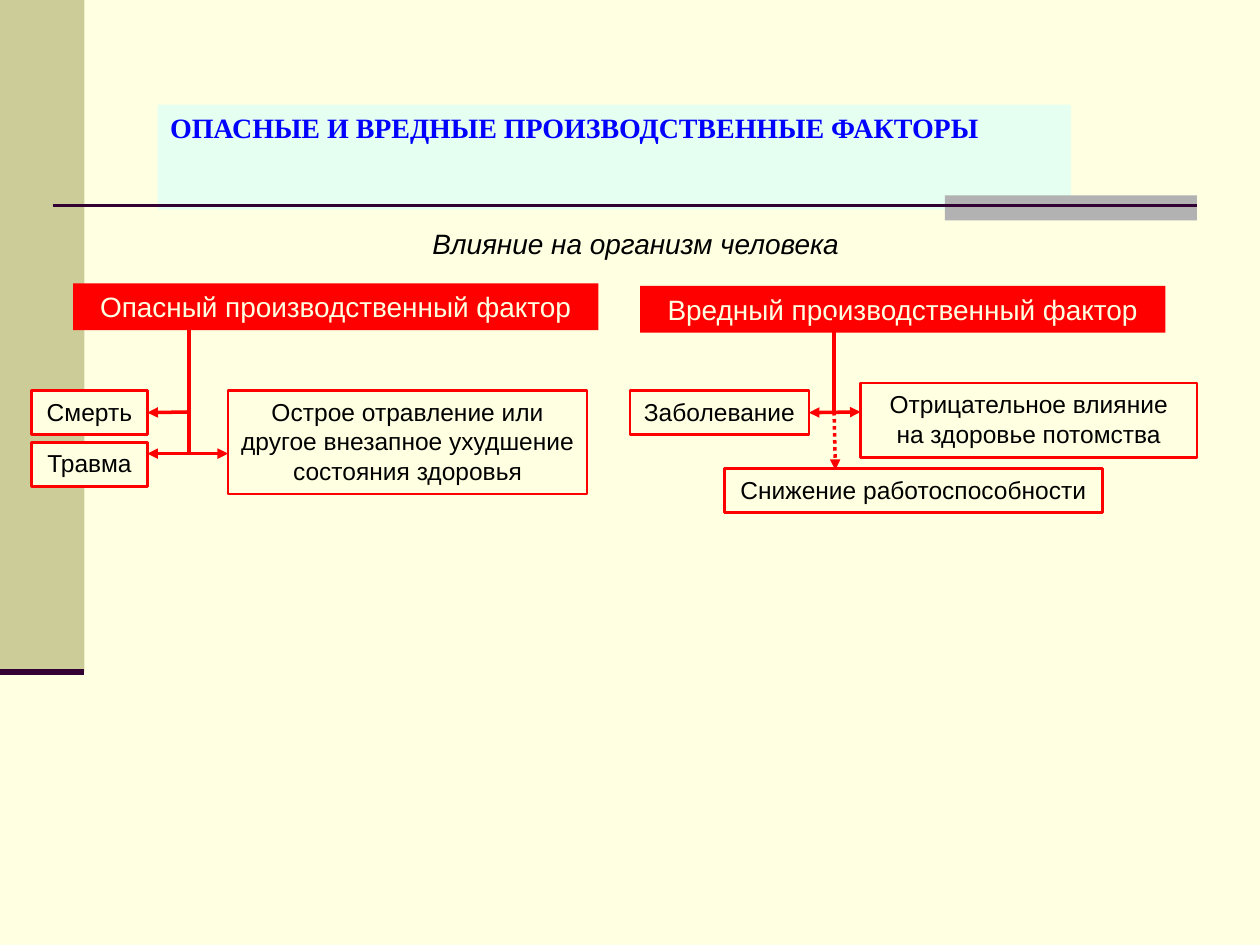
from lxml import etree
from pptx import Presentation
from pptx.dml import color
from pptx.enum import dml, shapes, text
from pptx.oxml import ns
from pptx.util import Inches, Pt

CREAM, RED, BLACK, PLUM = "FFFFE1", "FF0000", "000000", "330033"
FACTOR = {"size": Pt(16), "name": "Arial"}
EFFECT = {"size": Pt(14), "name": "Arial"}


def rgb(value):
    return color.RGBColor.from_string(value)


def paint(shape, value):
    shape.fill.solid()
    shape.fill.fore_color.rgb = rgb(value)


def place(shape, left, top, width, height):
    shape.left, shape.top = Inches(left), Inches(top)
    shape.width, shape.height = Inches(width), Inches(height)


def write(shape, words, ink, font, align=text.PP_ALIGN.CENTER):
    frame = shape.text_frame
    layout = {
        "word_wrap": True,
        "auto_size": text.MSO_AUTO_SIZE.SHAPE_TO_FIT_TEXT,
        "vertical_anchor": text.MSO_ANCHOR.TOP,
    }
    for name, value in layout.items():
        setattr(frame, name, value)
    para = frame.paragraphs[0]
    para.alignment = align
    span = para.add_run()
    span.text = words
    for name, value in font.items():
        setattr(span.font, name, value)
    span.font.color.rgb = rgb(ink)


def add_block(page, bounds, fill, border=None):
    block = page.shapes.add_shape(
        shapes.MSO_SHAPE.RECTANGLE, *(Inches(value) for value in bounds))
    block.shadow.inherit = False
    paint(block, fill)
    if border:
        block.line.color.rgb = rgb(border)
        block.line.width = Pt(1.5)
    else:
        block.line.fill.background()
    return block


def add_factor(page, left, top, words):
    block = add_block(page, (left, top, 4.17, 0.37), RED)
    write(block, words, CREAM, FACTOR)


def add_effect(page, bounds, words):
    block = add_block(page, bounds, CREAM, RED)
    write(block, words, BLACK, EFFECT)
    return block


def add_line(page, start, end, ink=RED, width=2, arrows=(), dash=None):
    line = page.shapes.add_connector(
        shapes.MSO_CONNECTOR.STRAIGHT,
        *(Inches(value) for value in start + end))
    line.line.color.rgb = rgb(ink)
    line.line.width = Pt(width)
    if dash:
        line.line.dash_style = dash
    outline = line.line._get_or_add_ln()
    for tag in arrows:
        etree.SubElement(outline, ns.qn(tag), type="triangle")
    etree.SubElement(line._element.spPr, ns.qn("a:effectLst"))
    return line


def add_title(page, words):
    title = page.shapes.title
    place(title, 1.25, 0.83, 7.25, 0.37)
    paint(title, "CCFFFF")
    tint = title._element.spPr.find(".//" + ns.qn("a:srgbClr"))
    etree.SubElement(tint, ns.qn("a:alpha"), val="50000")
    font = {"size": Pt(16), "name": "Times New Roman", "bold": True}
    write(title, words, "0000FF", font, text.PP_ALIGN.LEFT)


def add_decoration(page):
    add_block(page, (0, 0, 0.67, 5.33), "CCCC99")
    add_block(page, (7.5, 1.55, 2, 0.2), "B2B2B2")
    add_line(page, (0.42, 1.63), (9.5, 1.63), PLUM, 1.5)
    add_line(page, (0, 5.33), (0.67, 5.33), PLUM, 3.5)


def add_subtitle(page, words):
    box = page.shapes.add_textbox(
        Inches(3.17), Inches(1.75), Inches(3.75), Inches(0.37))
    write(box, words, BLACK, {**FACTOR, "italic": True})


def add_dangerous_branch(page):
    death = add_effect(page, (0.25, 3.1, 0.92, 0.35), "Смерть")
    add_effect(page, (0.25, 3.51, 0.92, 0.35), "Травма")
    add_effect(page, (1.81, 3.1, 2.85, 0.82),
               "Острое отравление или другое внезапное ухудшение "
               "состояния здоровья")
    add_line(page, (1.5, 2.6), (1.5, 3.6))
    arrow = add_line(page, (1.5, 3.27), (1.17, 3.27), arrows=["a:tailEnd"])
    arrow.end_connect(death, 3)
    add_line(page, (1.81, 3.6), (1.17, 3.6),
             arrows=["a:headEnd", "a:tailEnd"])
    add_factor(page, 0.58, 2.25, "Опасный производственный фактор")


def add_harmful_branch(page):
    add_factor(page, 5.08, 2.27, "Вредный производственный фактор")
    illness = add_effect(page, (5, 3.1, 1.42, 0.35), "Заболевание")
    add_effect(page, (5.75, 3.72, 3, 0.35), "Снижение работоспособности")
    add_effect(page, (6.83, 3.04, 2.67, 0.59),
               "Отрицательное влияние на здоровье потомства")
    add_line(page, (6.62, 3.27), (6.63, 3.73), arrows=["a:tailEnd"],
             dash=dml.MSO_LINE.ROUND_DOT)
    arrow = add_line(page, (6.83, 3.27), (6.42, 3.27),
                     arrows=["a:headEnd", "a:tailEnd"])
    arrow.end_connect(illness, 3)
    add_line(page, (6.62, 2.52), (6.62, 3.27))


def main():
    deck = Presentation()
    deck.slide_width, deck.slide_height = Inches(10), Inches(7.5)
    page = deck.slides.add_slide(deck.slide_layouts.get_by_name("Title Only"))
    paint(page.background, CREAM)
    add_decoration(page)
    add_title(page, "ОПАСНЫЕ И ВРЕДНЫЕ ПРОИЗВОДСТВЕННЫЕ ФАКТОРЫ")
    add_subtitle(page, "Влияние на организм человека")
    add_harmful_branch(page)
    add_dangerous_branch(page)
    deck.save("out.pptx")


if __name__ == "__main__":
    main()
